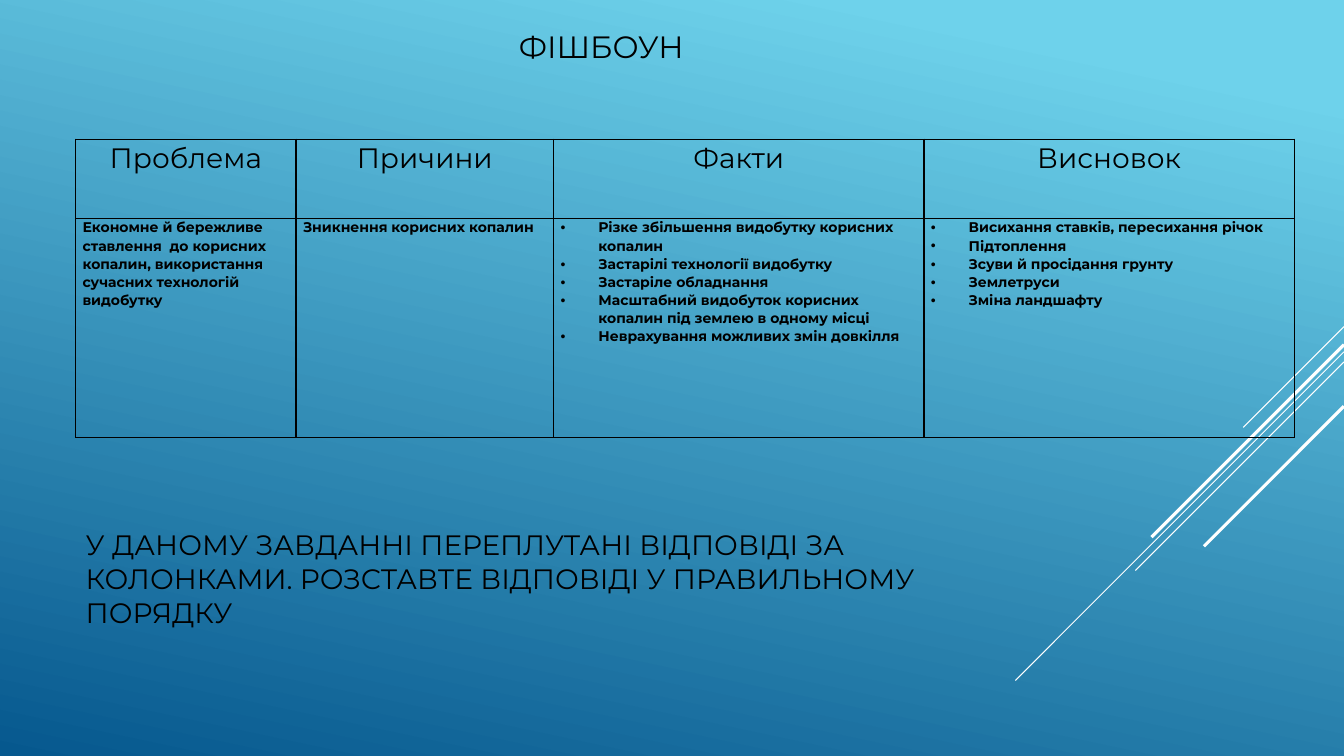
from lxml import etree
from pptx import Presentation
from pptx.dml.color import RGBColor
from pptx.enum import text as t
from pptx.enum.shapes import MSO_CONNECTOR
from pptx.oxml import ns
from pptx.util import Pt

HUES = {"ink": "000000", "ray": "FFFFFF", "sky": "6ED2EB", "deep": "06588E"}
FACE = "Montserrat"
WIDE, HIGH = 960, 540
HEADS = ["Проблема", "Причини", "Факти", "Висновок"]
BODY = [
    ["Економне й бережливе ставлення  до корисних копалин, використання сучасних технологій видобутку"],
    ["Зникнення корисних копалин"],
    ["Різке збільшення видобутку корисних копалин",
     "Застарілі технології видобутку",
     "Застаріле обладнання",
     "Масштабний видобуток корисних копалин під землею в одному місці",
     "Неврахування можливих змін довкілля"],
    ["Висихання ставків, пересихання річок",
     "Підтоплення",
     "Зсуви й просідання грунту",
     "Землетруси",
     "Зміна ландшафту"],
]
TASK = ("У ДАНОМУ ЗАВДАННІ ПЕРЕПЛУТАНІ ВІДПОВІДІ ЗА КОЛОНКАМИ. "
        "РОЗСТАВТЕ ВІДПОВІДІ У ПРАВИЛЬНОМУ ПОРЯДКУ")
COLS = [157.5, 184, 264.5, 264.5]
ROWS = [56.5, 156.5]
RAYS = [(233.3, 72, 0.75), (251.3, 234.7, 0.75), (258.5, 149, 0.75),
        (246.2, 137.5, 2.25), (290.2, 100, 2.25)]


def tint(name):
    """Return the named colour."""
    return RGBColor.from_string(HUES[name])


def style(para, size, align, bold=False):
    """Format a paragraph and its runs."""
    para.alignment = align
    for run in para.runs:
        run.font.size = Pt(size)
        run.font.bold = bold
        run.font.name = FACE
        run.font.color.rgb = tint("ink")


def paint(slide):
    """Fill the background with the blue gradient."""
    fill = slide.background.fill
    fill.gradient()
    fill.gradient_angle = 258
    for stop, (name, pos) in zip(fill.gradient_stops, [("sky", 0.1), ("deep", 1)]):
        stop.color.rgb = tint(name)
        stop.position = pos


def draw_rays(slide, right):
    """Draw the diagonal rays that run down from the right edge."""
    for top, span, weight in RAYS:
        ray = slide.shapes.add_connector(
            MSO_CONNECTOR.STRAIGHT, Pt(right), Pt(top), Pt(right - span), Pt(top + span))
        ray.line.color.rgb = tint("ray")
        ray.line.width = Pt(weight)
        etree.SubElement(ray._element.spPr, ns.qn("a:effectLst"))


def put_text(shape, box, words, size, align):
    """Place a shape in its box and set its text, centred by height."""
    shape.left, shape.top, shape.width, shape.height = map(Pt, box)
    frame = shape.text_frame
    frame.word_wrap = True
    frame.auto_size = t.MSO_AUTO_SIZE.NONE
    frame.vertical_anchor = t.MSO_ANCHOR.MIDDLE
    frame.text = words
    style(frame.paragraphs[0], size, align)


def add_edges(cell):
    """Draw a thin line on all four sides of a cell."""
    props = cell._tc.get_or_add_tcPr()
    for spot, side in enumerate("LRTB"):
        edge = etree.Element(ns.qn(f"a:ln{side}"), w=str(Pt(1)))
        fill = etree.SubElement(edge, ns.qn("a:solidFill"))
        etree.SubElement(fill, ns.qn("a:srgbClr"), val=HUES["ink"])
        props.insert(spot, edge)


def add_dot(para):
    """Give a paragraph a hanging bullet."""
    props = para._p.get_or_add_pPr()
    props.set("marL", str(Pt(27)))
    props.set("indent", str(Pt(-27)))
    etree.SubElement(props, ns.qn("a:buFont"), typeface="Arial")
    etree.SubElement(props, ns.qn("a:buChar"), char="•")


def fill_cell(cell, items, head):
    """Write the items into a cell, with bullets if there are several."""
    cell.fill.background()
    add_edges(cell)
    cell.margin_left = cell.margin_right = Pt(5)
    cell.margin_top = cell.margin_bottom = 0
    cell.text_frame.text = "\n".join(items)
    for para in cell.text_frame.paragraphs:
        if len(items) > 1:
            add_dot(para)
        para.line_spacing = 1.07
        if head:
            style(para, 20, t.PP_ALIGN.CENTER)
        else:
            style(para, 10, t.PP_ALIGN.LEFT, True)


def put_table(slide, left, top):
    """Build the four-column table."""
    table = slide.shapes.add_table(
        len(ROWS), len(COLS), Pt(left), Pt(top), Pt(sum(COLS)), Pt(sum(ROWS))).table
    table.first_row = table.horz_banding = False
    for row, high in zip(table.rows, ROWS):
        row.height = Pt(high)
    for num, wide in enumerate(COLS):
        table.columns[num].width = Pt(wide)
        fill_cell(table.cell(0, num), [HEADS[num]], True)
        fill_cell(table.cell(1, num), BODY[num], False)


def main():
    """Build and save the slide."""
    deck = Presentation()
    deck.slide_width, deck.slide_height = Pt(WIDE), Pt(HIGH)
    slide = deck.slides.add_slide(deck.slide_layouts[5])
    paint(slide)
    draw_rays(slide, WIDE)
    put_text(slide.shapes.title, (54, 353.5, 672, 119), TASK, 20, t.PP_ALIGN.LEFT)
    put_table(slide, 54, 99.5)
    label = slide.shapes.add_textbox(0, 0, 0, 0)
    put_text(label, (0, 16, 859, 34), "ФІШБОУН", 22, t.PP_ALIGN.CENTER)
    deck.save("out.pptx")


if __name__ == "__main__":
    main()
